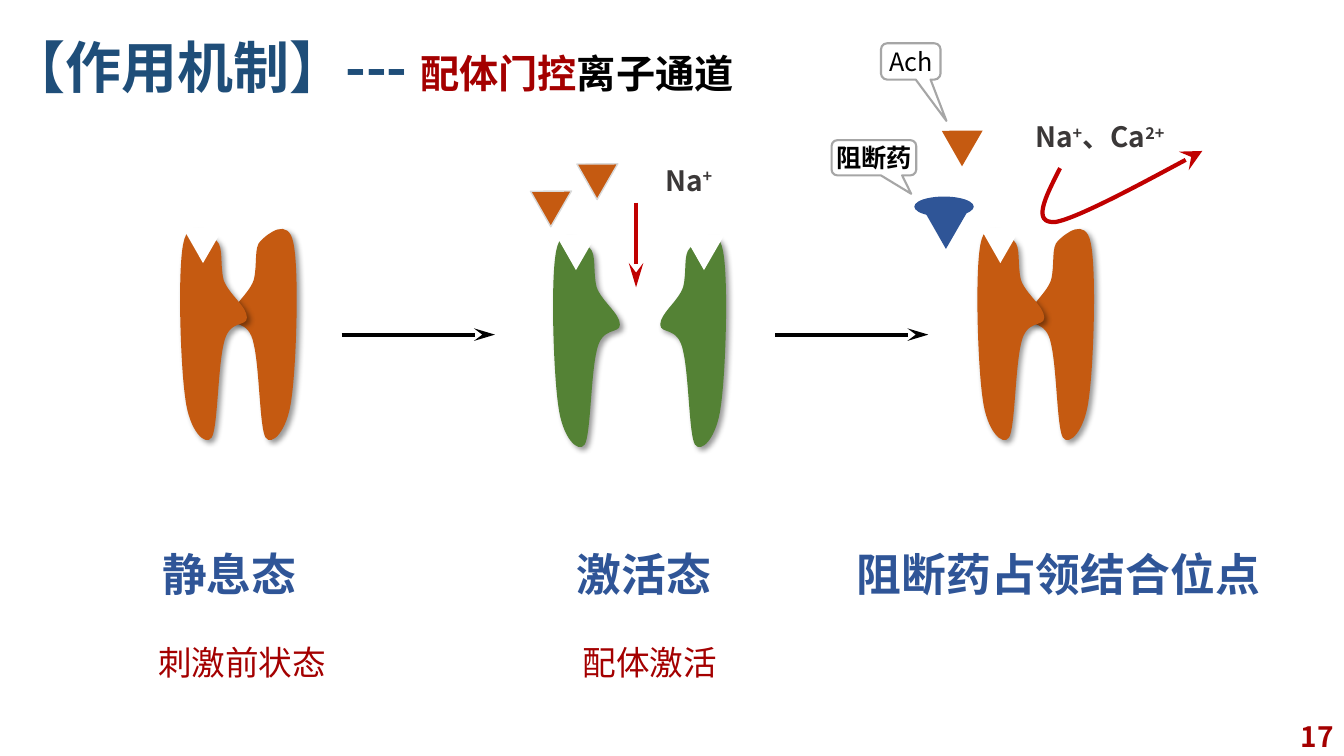
from collections import namedtuple

from lxml import etree
from pptx import Presentation
from pptx.dml.color import RGBColor
from pptx.enum.shapes import MSO_CONNECTOR, MSO_SHAPE
from pptx.enum.text import MSO_ANCHOR, PP_ALIGN
from pptx.oxml.ns import qn
from pptx.util import Inches, Pt

FONT = "Noto Sans CJK SC"
TITLE_BLUE = RGBColor(0x1F, 0x4E, 0x79)
LABEL_BLUE = RGBColor(0x2F, 0x55, 0x97)
DARK_RED = RGBColor(0xA4, 0x00, 0x00)
ARROW_RED = RGBColor(0xC0, 0x00, 0x00)
ORANGE = RGBColor(0xC5, 0x5A, 0x11)
GREEN = RGBColor(0x54, 0x82, 0x35)
ION_GREY = RGBColor(0x3B, 0x38, 0x38)
CALLOUT_GREY = RGBColor(0xA6, 0xA6, 0xA6)
EDGE_GREY = RGBColor(0xD9, 0xD9, 0xD9)
BLACK = RGBColor(0, 0, 0)
WHITE = RGBColor(0xFF, 0xFF, 0xFF)

TRIANGLE, ELLIPSE = MSO_SHAPE.ISOSCELES_TRIANGLE, MSO_SHAPE.OVAL
CALLOUT = MSO_SHAPE.ROUNDED_RECTANGULAR_CALLOUT
STRAIGHT = MSO_CONNECTOR.STRAIGHT
TOP, MIDDLE = MSO_ANCHOR.TOP, MSO_ANCHOR.MIDDLE
LEFT, CENTER, RIGHT = PP_ALIGN.LEFT, PP_ALIGN.CENTER, PP_ALIGN.RIGHT

CELL = 0.1  # inches; every length below counts grid cells
COLS, ROWS = 133.33, 75
LABEL_ROW, NOTE_ROW = 49.7, 59.2
LEFT_WIDTH, RIGHT_WIDTH, HALF_HEIGHT = 6.6, 6.5, 20.9
# Cubic curves of the left half of a channel: start, then triples of points
HALF_OUTLINE = [
    (6.6, 8.8),
    (6.6, 7.7), (4.8, 6.5), (4.3, 5.1),
    (3.9, 3.6), (4.3, 1.8), (3.6, 1.2),
    (2.9, 0.5), (0.8, -1.2), (0.3, 1.4),
    (-0.3, 4.1), (0, 13.6), (0.5, 16.9),
    (0.9, 20.1), (2.5, 21.6), (3.1, 20.7),
    (3.7, 19.8), (3.7, 13.9), (4.3, 11.4),
    (4.8, 8.9), (6.6, 9.8), (6.6, 8.8)]
REBOUND = [(2.5, 0), (0.6, 2.6), (-1.2, 5), (1.2, 5.2),
           (3.5, 5.2), (16.7, 0.6), (16.7, 0.6)]

Box = namedtuple("Box", "x y")
Run = namedtuple("Run", "text size color bold base", defaults=(False, 0))


def cells(*values):
    return [Inches(v * CELL) for v in values]


def write(tf, runs, align=LEFT, anchor=TOP):
    tf.vertical_anchor = anchor
    p = tf.paragraphs[0]
    p.alignment = align
    for run in runs:
        r = p.add_run()
        r.text = run.text
        r.font.size, r.font.bold, r.font.name = Pt(run.size), run.bold, FONT
        r.font.color.rgb = run.color
        rpr = r.font._element
        etree.SubElement(rpr, qn("a:ea")).set("typeface", FONT)
        if run.base:
            rpr.set("baseline", str(run.base * 1000))
    return p


def add_text(slide, box, x, y, w, h, runs, wrap=True, **layout):
    sp = slide.shapes.add_textbox(*cells(box.x + x, box.y + y, w, h))
    sp.text_frame.word_wrap = wrap
    return write(sp.text_frame, runs, **layout)


def style(sp, fill=None, line=None, width=1):
    sp.shadow.inherit = False
    if fill is None:
        sp.fill.background()
    else:
        sp.fill.solid()
        sp.fill.fore_color.rgb = fill
    if line is None:
        sp.line.fill.background()
    else:
        sp.line.color.rgb = line
        sp.line.width = Pt(width)


def add_arrowhead(sp, breadth="med"):
    ln = sp._element.spPr.find(qn("a:ln"))
    etree.SubElement(ln, qn("a:tailEnd"), type="stealth", w=breadth, len="lg")


def add_arrow(slide, x1, y1, x2, y2, color, width):
    sp = slide.shapes.add_connector(STRAIGHT, *cells(x1, y1, x2, y2))
    sp.line.color.rgb, sp.line.width = color, Pt(width)
    add_arrowhead(sp)
    etree.SubElement(sp._element.spPr, qn("a:effectLst"))


def add_triangle(shapes, x, y, fill, line=None):
    """Equilateral triangle turned to point down."""
    sp = shapes.add_shape(TRIANGLE, *cells(x, y, 4.1, 3.5))
    sp.rotation = 300
    style(sp, fill, line)


def add_curve(shapes, x, y, w, h, points, closed):
    """Outline of cubic curves, its points measured from the corner of the box."""
    builder = shapes.build_freeform(*cells(*points[0]), scale=1.0)
    builder.add_line_segments([cells(*pt) for pt in points[3::3]], close=closed)
    sp = builder.convert_to_shape()
    sp.left, sp.top, sp.width, sp.height = cells(x, y, w, h)
    outline = next(sp._element.iter(qn("a:path")))
    outline.set("w", str(sp.width))
    outline.set("h", str(sp.height))

    def put(parent, point):
        px, py = cells(*point)
        etree.SubElement(parent, qn("a:pt"), x=str(px), y=str(py))

    move = outline.find(qn("a:moveTo"))
    move.clear()
    put(move, points[0])
    for i, straight in enumerate(outline.findall(qn("a:lnTo"))):
        curve = etree.Element(qn("a:cubicBezTo"))
        for point in points[3 * i + 1:3 * i + 4]:
            put(curve, point)
        outline.replace(straight, curve)
    return sp


def add_shadow(sp):
    effects = sp._element.spPr.find(qn("a:effectLst"))
    shadow = etree.SubElement(effects, qn("a:outerShdw"), blurRad=str(Pt(4)),
                              dist=str(Pt(3)), dir="2700000", algn="tl", rotWithShape="0")
    color = etree.SubElement(shadow, qn("a:srgbClr"), val="000000")
    etree.SubElement(color, qn("a:alpha"), val="40000")


def add_channel(slide, x, y, spread, fill, right_notch=False):
    """Two mirrored halves, the right one set off by spread, with binding notches."""
    shapes = slide.shapes.add_group_shape().shapes
    ratio = RIGHT_WIDTH / LEFT_WIDTH
    mirrored = [(RIGHT_WIDTH - px * ratio, py) for px, py in HALF_OUTLINE]
    for shift, width, outline in ((spread, RIGHT_WIDTH, mirrored),
                                  (0, LEFT_WIDTH, HALF_OUTLINE)):
        sp = add_curve(shapes, x + shift, y, width, HALF_HEIGHT, outline, True)
        style(sp, fill)
        add_shadow(sp)
    add_triangle(shapes, x - 0.3, y - 1, WHITE)
    if right_notch:
        add_triangle(shapes, x + spread + 1.8, y - 1, WHITE)


def add_callout(slide, box, x, y, w, h, tip, run):
    sp = slide.shapes.add_shape(CALLOUT, *cells(box.x + x, box.y + y, w, h))
    style(sp, line=CALLOUT_GREY, width=1.5)
    for i, value in enumerate((*tip, 0.167)):
        sp.adjustments[i] = value
    tf = sp.text_frame
    tf.margin_left = tf.margin_right = tf.margin_top = tf.margin_bottom = 0
    write(tf, [run], CENTER, MIDDLE)


def add_label(slide, box, x, w, text):
    add_text(slide, box, x, LABEL_ROW, w, 6.4, [Run(text, 32, LABEL_BLUE, True)], wrap=False)


def add_note(slide, box, x, w, text):
    add_text(slide, box, x, NOTE_ROW, w, 5, [Run(text, 24, DARK_RED)])


def ion_runs(*parts):
    """Alternate plain and raised runs."""
    return [Run(part, 20, ION_GREY, True, 30 * (i % 2)) for i, part in enumerate(parts)]


def add_header(slide, box):
    p = add_text(slide, box, 0, 0, 115, 10.8,
                 [Run("【作用机制】--- ", 40, TITLE_BLUE, True),
                  Run("配体门控", 28, DARK_RED, True),
                  Run("离子通道", 28, BLACK, True)], anchor=MIDDLE)
    p.line_spacing = 0.9


def add_resting_stage(slide, box):
    add_channel(slide, box.x + 3.9, box.y + 18.7, 5, ORANGE)
    add_label(slide, box, 1.1, 15.5, "静息态")
    add_note(slide, box, 0.7, 21.5, "刺激前状态")


def add_active_stage(slide, box):
    add_channel(slide, box.x + 4.9, box.y + 19.4, 10.6, GREEN, right_notch=True)
    for x, y in ((2.1, 14.1), (6.7, 11.4)):
        add_triangle(slide.shapes, box.x + x, box.y + y, ORANGE, EDGE_GREY)
    add_text(slide, box, 15, 11.7, 8, 4.4, ion_runs("Na", "+"))
    ion_x = box.x + 13.1
    add_arrow(slide, ion_x, box.y + 16.1, ion_x, box.y + 24.5, ARROW_RED, 3.5)
    add_label(slide, box, 6.2, 15.5, "激活态")
    add_note(slide, box, 6.8, 16.8, "配体激活")


def add_blocked_stage(slide, box):
    add_triangle(slide.shapes, box.x + 11.9, box.y + 8.1, ORANGE)
    add_channel(slide, box.x + 16, box.y + 18.7, 5, ORANGE)
    blocker = slide.shapes.add_group_shape().shapes
    add_triangle(blocker, box.x + 10.3, box.y + 16.3, LABEL_BLUE)
    style(blocker.add_shape(ELLIPSE, *cells(box.x + 9.7, box.y + 15.5, 5.9, 2)), LABEL_BLUE)
    add_label(slide, box, 3, 42.4, "阻断药占领结合位点")
    add_text(slide, box, 20.7, 7.4, 16.4, 4.4, ion_runs("Na", "+", "、Ca", "2+"))
    sp = add_curve(slide.shapes, box.x + 22, box.y + 11.7, 16.7, 5.1, REBOUND, False)
    sp.rotation = 350.7
    style(sp, line=ARROW_RED, width=3)
    add_arrowhead(sp, "lg")
    add_callout(slide, box, 1.5, 9.9, 8.4, 3.5, (0.44, 1.02), Run("阻断药", 18, BLACK, True))
    add_callout(slide, box, 6.4, 0.3, 5.9, 3.6, (0.6, 1.64), Run("Ach", 18, BLACK))


def main():
    prs = Presentation()
    prs.slide_width, prs.slide_height = cells(COLS, ROWS)
    slide = prs.slides.add_slide(prs.slide_layouts[6])
    add_header(slide, Box(0, 1.6))
    add_resting_stage(slide, Box(14, 4))
    add_active_stage(slide, Box(50, 4))
    add_blocked_stage(slide, Box(81, 4))
    for x in (33.9, 76.9):
        add_arrow(slide, x, 33.2, x + 15.2, 33.2, BLACK, 3)
    add_text(slide, Box(COLS - 30, ROWS - 4), 0, 0, 30, 4,
             [Run("17", 20, DARK_RED, True)], align=RIGHT, anchor=MIDDLE)
    prs.save("out.pptx")


if __name__ == "__main__":
    main()
